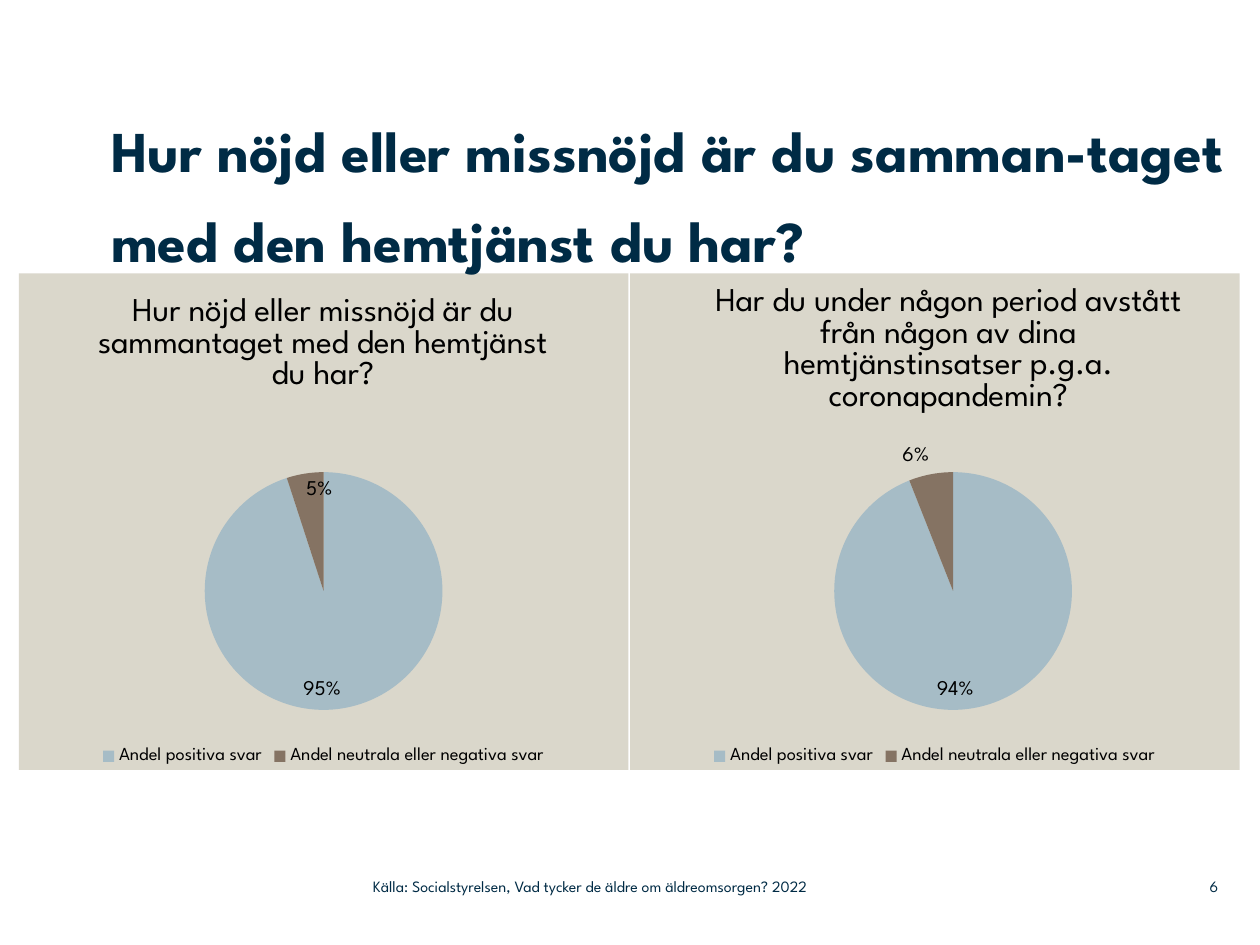
"""Build a slide that compares two pie charts on home care satisfaction."""
from dataclasses import dataclass

from pptx import Presentation
from pptx.chart.data import CategoryChartData
from pptx.dml.color import RGBColor
from pptx.enum.chart import XL_CHART_TYPE, XL_LABEL_POSITION, XL_LEGEND_POSITION
from pptx.enum.text import MSO_ANCHOR, PP_ALIGN
from pptx.oxml import parse_xml
from pptx.oxml.ns import nsdecls, qn
from pptx.util import Cm, Pt

NAVY = RGBColor(0x00, 0x2B, 0x45)
BLACK = RGBColor(0x00, 0x00, 0x00)
SAND = RGBColor(0xDA, 0xD7, 0xCB)
BLUE = RGBColor(0xA6, 0xBC, 0xC6)
BROWN = RGBColor(0x85, 0x73, 0x63)
FONT = "League Spartan"
CATEGORIES = ("Andel positiva svar", "Andel neutrala eller negativa svar")
CHART_TOP, CHART_WIDTH, CHART_HEIGHT = 5.51, 12.29, 10.01
FOOTER_TOP, FOOTER_HEIGHT = 17.5, 0.74


@dataclass
class Label:
    text: str
    box: tuple[float, float, float, float]
    size: float
    bold: bool = False
    align: PP_ALIGN = PP_ALIGN.LEFT
    anchor: MSO_ANCHOR = MSO_ANCHOR.MIDDLE
    spacing: float = 1.0


@dataclass
class Pie:
    question: str
    left: float
    shares: tuple[int, int]
    plot_area: tuple[float, float, float, float]
    title_corner: tuple[float, float]
    minority_outside: bool = False


LABELS = (
    Label("Hur nöjd eller missnöjd är du samman-taget med den hemtjänst du har?",
          (2.24, 1.9, 22.71, 3.61), 33, bold=True, anchor=MSO_ANCHOR.TOP, spacing=1.3),
    Label("Källa: Socialstyrelsen, Vad tycker de äldre om äldreomsorgen? 2022",
          (7.52, FOOTER_TOP, 11.25, FOOTER_HEIGHT), 9),
    Label("6", (23.37, FOOTER_TOP, 1.19, FOOTER_HEIGHT), 9, align=PP_ALIGN.RIGHT),
)
PIES = (
    Pie("Har du under någon period avstått från någon av dina hemtjänstinsatser "
        "p.g.a. coronapandemin?", 12.7, (94, 6), (0.335, 0.4, 0.39, 0.48),
        (0.13, 0.01), minority_outside=True),
    Pie("Hur nöjd eller missnöjd är du sammantaget med den hemtjänst du har?",
        0.38, (95, 5), (0.305, 0.4, 0.39, 0.48), (0.12, 0.03)),
)


def apply_format(target, values: dict) -> None:
    for attribute, value in values.items():
        setattr(target, attribute, value)


def style_font(font, size: float, color: RGBColor, bold: bool = False) -> None:
    apply_format(font, {"name": FONT, "size": Pt(size), "bold": bold})
    font.color.rgb = color


def add_label(slide, label: Label) -> None:
    frame = slide.shapes.add_textbox(*map(Cm, label.box)).text_frame
    apply_format(frame, {
        "word_wrap": True, "vertical_anchor": label.anchor,
        "margin_left": 0, "margin_right": 0, "margin_top": 0, "margin_bottom": 0,
    })
    paragraph = frame.paragraphs[0]
    apply_format(paragraph, {"alignment": label.align, "line_spacing": label.spacing})
    run = paragraph.add_run()
    run.text = label.text
    style_font(run.font, label.size, NAVY, label.bold)


def set_layout(parent, index: int, fractions: tuple[float, ...], target: str = "") -> None:
    for old in parent.findall(qn("c:layout")):
        parent.remove(old)
    inner = f'<c:layoutTarget val="{target}"/>' if target else ""
    modes = "".join(f'<c:{axis}Mode val="edge"/>' for axis in "xy")
    extent = "".join(f'<c:{key} val="{value}"/>' for key, value in zip("xywh", fractions))
    parent.insert(index, parse_xml(
        f'<c:layout {nsdecls("c")}><c:manualLayout>{inner}{modes}{extent}'
        "</c:manualLayout></c:layout>"))


def fill_background(chart_space, color: RGBColor) -> None:
    chart_space.find(qn("c:chart")).addnext(parse_xml(
        f'<c:spPr {nsdecls("c", "a")}><a:solidFill><a:srgbClr val="{color}"/></a:solidFill>'
        "<a:ln><a:noFill/></a:ln></c:spPr>"))


def label_shares(series, minority_outside: bool) -> None:
    labels = series.data_labels
    apply_format(labels, {
        "show_value": False, "show_percentage": True, "number_format": "0%",
        "number_format_is_linked": False, "position": XL_LABEL_POSITION.INSIDE_END,
    })
    style_font(labels.font, 12, BLACK)
    if minority_outside:
        minority = series.points[1].data_label
        style_font(minority.font, 12, BLACK)
        minority.position = XL_LABEL_POSITION.OUTSIDE_END
        single = labels._element.find(qn("c:dLbl"))
        single.find(qn("c:showVal")).set("val", "0")
        single.find(qn("c:showPercent")).set("val", "1")


def add_pie(slide, pie: Pie) -> None:
    data = CategoryChartData()
    data.categories = CATEGORIES
    data.add_series("Series 1", pie.shares)
    place = map(Cm, (pie.left, CHART_TOP, CHART_WIDTH, CHART_HEIGHT))
    chart = slide.shapes.add_chart(XL_CHART_TYPE.PIE, *place, data).chart
    style_font(chart.font, 18, BLACK)

    apply_format(chart, {"has_title": True, "has_legend": True})
    title_run = chart.chart_title.text_frame.paragraphs[0].add_run()
    title_run.text = pie.question
    style_font(title_run.font, 19, BLACK)
    apply_format(chart.legend, {
        "position": XL_LEGEND_POSITION.BOTTOM, "include_in_layout": False})
    style_font(chart.legend.font, 10.5, BLACK)

    plot = chart.plots[0]
    plot.vary_by_categories = True
    series = plot.series[0]
    for index, color in enumerate((BLUE, BROWN)):
        slice_format = series.points[index].format
        slice_format.fill.solid()
        slice_format.fill.fore_color.rgb = color
        slice_format.line.fill.background()
    label_shares(series, pie.minority_outside)

    chart_space = chart._chartSpace
    fill_background(chart_space, SAND)
    set_layout(chart_space.find(".//" + qn("c:plotArea")), 0, pie.plot_area, "inner")
    set_layout(chart_space.find(".//" + qn("c:title")), 1, pie.title_corner)


def main() -> None:
    deck = Presentation()
    apply_format(deck, {"slide_width": Cm(25.4), "slide_height": Cm(19.05)})
    slide = deck.slides.add_slide(deck.slide_layouts[6])
    for pie in PIES:
        add_pie(slide, pie)
    for label in LABELS:
        add_label(slide, label)
    deck.save("out.pptx")


if __name__ == "__main__":
    main()
